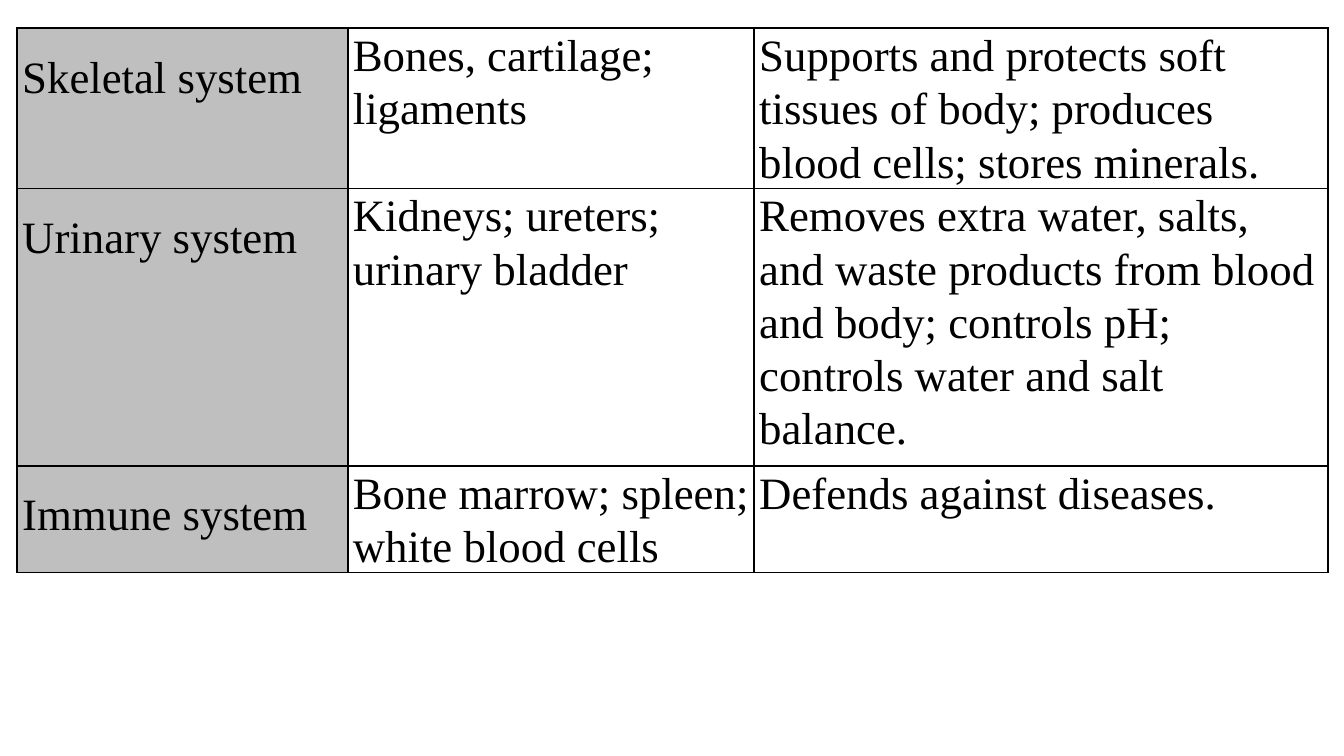
"""Build a slide with a table of body systems, their organs and their functions."""
from dataclasses import astuple, dataclass

from lxml import etree
from pptx import Presentation
from pptx.dml.color import RGBColor
from pptx.oxml import ns
from pptx.util import Inches, Pt

BLACK = RGBColor(0x00, 0x00, 0x00)
GREY = RGBColor(0xBF, 0xBF, 0xBF)
WHITE = RGBColor(0xFF, 0xFF, 0xFF)
FONT = "Times New Roman"
COLUMN_WIDTHS = (3.28, 4.03, 5.69)
ROW_HEIGHTS = (1.59, 2.75, 1.06)


@dataclass(frozen=True)
class BodySystem:
    name: str
    organs: str
    function: str


SYSTEMS = (
    BodySystem("Skeletal system", "Bones, cartilage; ligaments",
               "Supports and protects soft tissues of body; produces blood cells; "
               "stores minerals."),
    BodySystem("Urinary system", "Kidneys; ureters; urinary bladder",
               "Removes extra water, salts, and waste products from blood and body; "
               "controls pH; controls water and salt balance."),
    BodySystem("Immune system", "Bone marrow; spleen; white blood cells",
               "Defends against diseases."),
)


def add_borders(cell) -> None:
    tc_pr = cell._tc.get_or_add_tcPr()
    for i, side in enumerate(("lnL", "lnR", "lnT", "lnB")):
        ln = etree.Element(ns.qn(f"a:{side}"), w=str(Pt(1.5)))
        fill = etree.SubElement(ln, ns.qn("a:solidFill"))
        etree.SubElement(fill, ns.qn("a:srgbClr"), val=str(BLACK))
        tc_pr.insert(i, ln)


def fill_cell(cell, words: str, is_name: bool) -> None:
    cell.margin_left = cell.margin_right = Inches(0.05)
    cell.margin_top = cell.margin_bottom = 0
    cell.fill.solid()
    cell.fill.fore_color.rgb = GREY if is_name else WHITE
    add_borders(cell)
    p = cell.text_frame.paragraphs[0]
    p.text = words
    p.line_spacing = 1.5 if is_name else 1.07
    p.font.name = FONT
    p.font.size = Pt(32)
    p.font.color.rgb = BLACK


def add_systems_table(s, systems: tuple[BodySystem, ...]) -> None:
    frame = s.shapes.add_table(
        len(systems), len(COLUMN_WIDTHS), Inches(0.17), Inches(0.28),
        Inches(sum(COLUMN_WIDTHS)), Inches(sum(ROW_HEIGHTS)))
    table = frame.table
    table.first_row = table.horz_banding = False
    for column, width in zip(table.columns, COLUMN_WIDTHS):
        column.width = Inches(width)
    for row, height, system in zip(table.rows, ROW_HEIGHTS, systems):
        row.height = Inches(height)
        for i, (cell, words) in enumerate(zip(row.cells, astuple(system))):
            fill_cell(cell, words, is_name=i == 0)


def main() -> None:
    prs = Presentation()
    prs.slide_width, prs.slide_height = Inches(13.33), Inches(7.5)
    s = prs.slides.add_slide(prs.slide_layouts[6])
    add_systems_table(s, SYSTEMS)
    prs.save("out.pptx")


if __name__ == "__main__":
    main()
